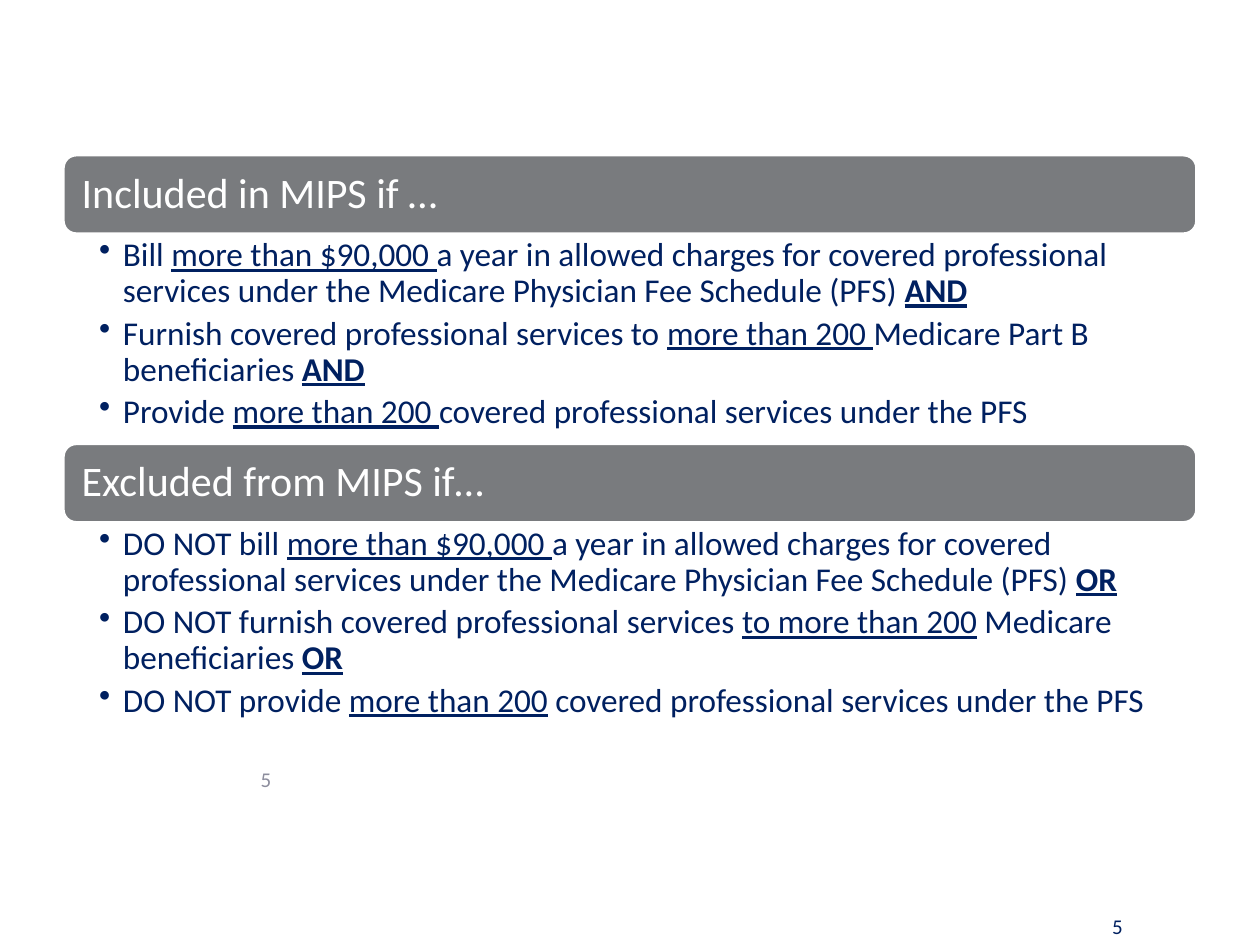
import dataclasses

import lxml.etree
import pptx
import pptx.dml.color
import pptx.enum.shapes
import pptx.enum.text
import pptx.oxml.ns
import pptx.util
from pptx.util import Cm, Pt


@dataclasses.dataclass(frozen=True)
class Theme:
    font: str = "Calibri"
    navy: str = "002060"
    bar: str = "797B7E"
    white: str = "FFFFFF"
    muted: str = "8C8D9D"
    heading_size: float = 24
    body_size: float = 19
    number_size: float = 12


THEME = Theme()
LEFT, WIDTH = 1.27, 22.86
BAR_HEIGHT, LIST_HEIGHT = 1.6, 4.22
FIRST_TOP = 3.12

PLAIN, UNDERLINED, STRONG = "plain", "underlined", "strong"

SECTIONS = [
    ("Included in MIPS if …", [
        [("Bill ", PLAIN), ("more than $90,000 ", UNDERLINED),
         ("a year in allowed charges for covered professional services "
          "under the Medicare Physician Fee Schedule (PFS) ", PLAIN),
         ("AND", STRONG)],
        [("Furnish covered professional services to ", PLAIN),
         ("more than 200 ", UNDERLINED),
         ("Medicare Part B beneficiaries ", PLAIN), ("AND", STRONG)],
        [("Provide ", PLAIN), ("more than 200 ", UNDERLINED),
         ("covered professional services under the PFS", PLAIN)],
    ]),
    ("Excluded from MIPS if…", [
        [("DO NOT bill ", PLAIN), ("more than $90,000 ", UNDERLINED),
         ("a year in allowed charges for covered professional services "
          "under the Medicare Physician Fee Schedule (PFS) ", PLAIN),
         ("OR", STRONG)],
        [("DO NOT furnish covered professional services ", PLAIN),
         ("to more than 200", UNDERLINED),
         (" Medicare beneficiaries ", PLAIN), ("OR", STRONG)],
        [("DO NOT provide ", PLAIN), ("more than 200", UNDERLINED),
         (" covered professional services under the PFS", PLAIN)],
    ]),
]


def color(value):
    return pptx.dml.color.RGBColor.from_string(value)


def style_font(font, size, value):
    font.name = THEME.font
    font.size = Pt(size)
    font.color.rgb = color(value)


def set_margins(frame, left, top, right, bottom):
    frame.word_wrap = True
    frame.margin_left, frame.margin_top = Cm(left), Cm(top)
    frame.margin_right, frame.margin_bottom = Cm(right), Cm(bottom)


def add_heading_bar(page, top, text):
    bar = page.shapes.add_shape(
        pptx.enum.shapes.MSO_SHAPE.ROUNDED_RECTANGLE,
        Cm(LEFT), Cm(top), Cm(WIDTH), Cm(BAR_HEIGHT))
    bar.shadow.inherit = False
    bar.fill.solid()
    bar.fill.fore_color.rgb = color(THEME.bar)
    bar.line.color.rgb = color(THEME.white)
    bar.line.width = Pt(2)
    frame = bar.text_frame
    set_margins(frame, 0.3, 0.2, 0.3, 0.2)
    frame.vertical_anchor = pptx.enum.text.MSO_ANCHOR.MIDDLE
    frame.text = text
    para = frame.paragraphs[0]
    para.alignment = pptx.enum.text.PP_ALIGN.LEFT
    para.line_spacing = 0.9
    style_font(para.runs[0].font, THEME.heading_size, THEME.white)


def add_bullet(para):
    para.level = 1
    properties = para._p.get_or_add_pPr()
    properties.set("marL", str(Cm(0.48)))
    properties.set("indent", str(-Cm(0.48)))
    bullet = lxml.etree.SubElement(properties, pptx.oxml.ns.qn("a:buChar"))
    bullet.set("char", "•")


def add_bullet_list(page, top, items):
    box = page.shapes.add_textbox(
        Cm(LEFT), Cm(top), Cm(WIDTH), Cm(LIST_HEIGHT))
    frame = box.text_frame
    set_margins(frame, 0.73, 0.08, 0.48, 0.08)
    for index, item in enumerate(items):
        para = frame.add_paragraph() if index else frame.paragraphs[0]
        add_bullet(para)
        para.line_spacing = 0.9
        para.space_after = Pt(3.8)
        for text, emphasis in item:
            span = para.add_run()
            span.text = text
            style_font(span.font, THEME.body_size, THEME.navy)
            span.font.underline = emphasis != PLAIN
            span.font.bold = emphasis == STRONG


def add_page_number(page, left, top, width, alignment, value):
    box = page.shapes.add_textbox(Cm(left), Cm(top), Cm(width), Cm(0.76))
    frame = box.text_frame
    frame.word_wrap = True
    frame.vertical_anchor = pptx.enum.text.MSO_ANCHOR.MIDDLE
    frame.text = "5"
    para = frame.paragraphs[0]
    para.alignment = alignment
    style_font(para.runs[0].font, THEME.number_size, value)


def main():
    deck = pptx.Presentation()
    deck.slide_width, deck.slide_height = Cm(25.4), Cm(19.05)
    page = deck.slides.add_slide(deck.slide_layouts[6])
    align = pptx.enum.text.PP_ALIGN
    add_page_number(page, 21.79, 18.29, 1.47, align.CENTER, THEME.navy)
    for index, (heading, items) in enumerate(SECTIONS):
        top = FIRST_TOP + index * (BAR_HEIGHT + LIST_HEIGHT)
        add_heading_bar(page, top, heading)
        add_bullet_list(page, top + BAR_HEIGHT, items)
    add_page_number(page, 0, 15.32, 5.72, align.RIGHT, THEME.muted)
    deck.save("out.pptx")


if __name__ == "__main__":
    main()
